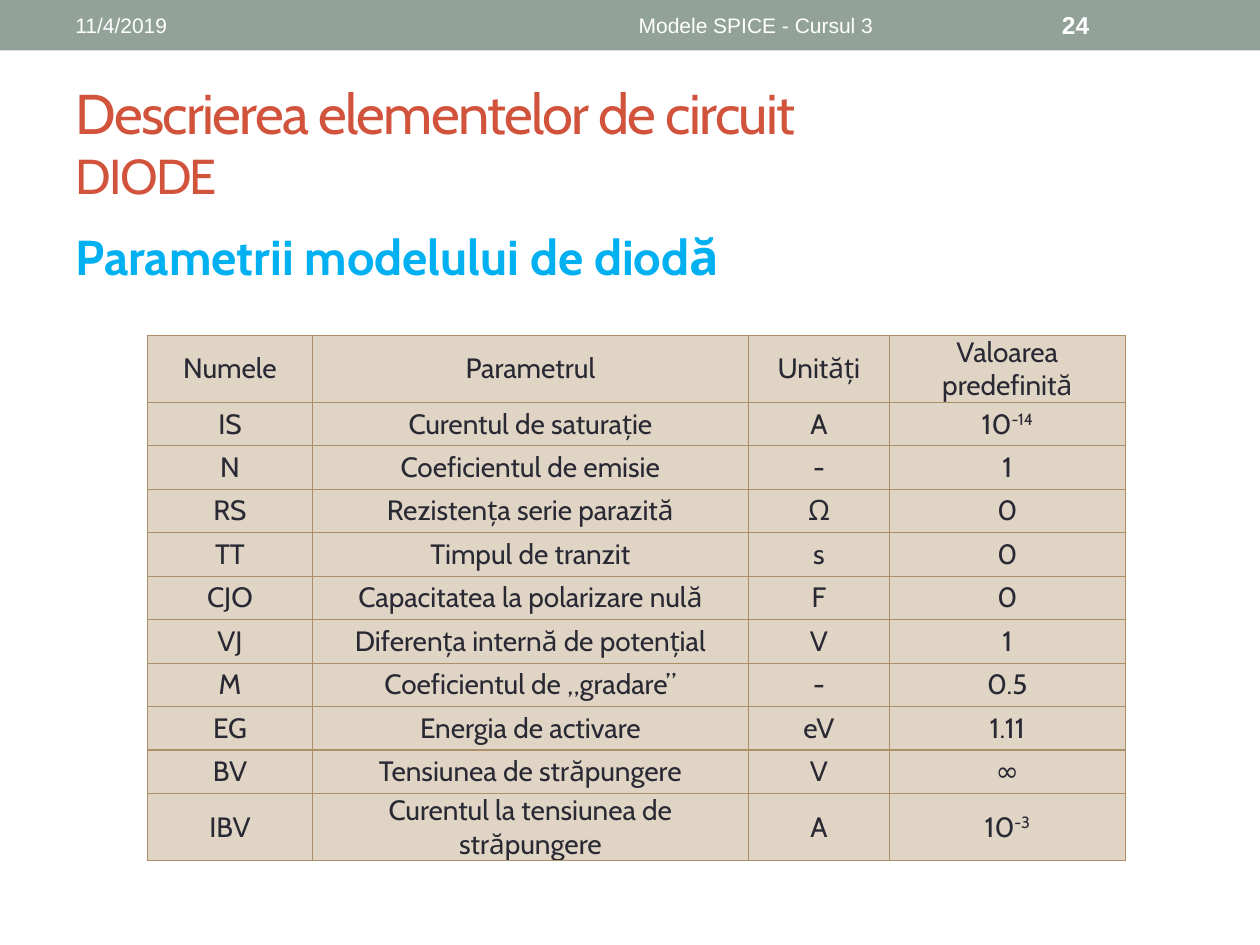
from lxml.etree import SubElement
from pptx import Presentation
from pptx.dml.color import RGBColor
from pptx.enum.shapes import MSO_SHAPE
from pptx.enum.text import MSO_ANCHOR, MSO_AUTO_SIZE, PP_ALIGN
from pptx.oxml.ns import qn
from pptx.util import Inches, Pt

COLORS = {
    "band": "93A299", "title": "D2533C", "subtitle": "00B0F0", "white": "FFFFFF",
    "cell": "E0D4C5", "border": "AD8F67", "text": "292934",
}

TITLE_LINES = [("Descrierea elementelor de circuit", 32), ("DIODE", 28)]
SUBTITLE = "Parametrii modelului de diodă"

# text, left, width, size, bold, alignment
HEADER_ITEMS = [
    ("11/4/2019", 0.5, 3.17, 12, False, PP_ALIGN.LEFT),
    ("Modele SPICE - Cursul 3", 3.75, 4.5, 12, False, PP_ALIGN.CENTER),
    ("24", 8.33, 1.17, 14, True, PP_ALIGN.LEFT),
]

# A caret marks the start of a superscript
PARAMETERS = [
    ("Numele", "Parametrul", "Unități", "Valoarea predefinită"),
    ("IS", "Curentul de saturație", "A", "10^-14"),
    ("N", "Coeficientul de emisie", "-", "1"),
    ("RS", "Rezistența serie parazită", "Ω", "0"),
    ("TT", "Timpul de tranzit", "s", "0"),
    ("CJO", "Capacitatea la polarizare nulă", "F", "0"),
    ("VJ", "Diferența internă de potențial", "V", "1"),
    ("M", "Coeficientul de „gradare”", "-", "0.5"),
    ("EG", "Energia de activare", "eV", "1.11"),
    ("BV", "Tensiunea de străpungere", "V", "∞"),
    ("IBV", "Curentul la tensiunea de străpungere", "A", "10^-3"),
]
COLUMN_WIDTHS = [1.31, 3.46, 1.12, 1.87]
TALL_ROW, ROW = 0.53, 0.345


def color(name):
    return RGBColor.from_string(COLORS[name])


def style_font(font, name, size, color_name, bold=False):
    font.name, font.size, font.bold = name, Pt(size), bold
    font.color.rgb = color(color_name)


def place(shape, left, top, width, height):
    shape.left, shape.top = Inches(left), Inches(top)
    shape.width, shape.height = Inches(width), Inches(height)


def add_header(slide):
    band = slide.shapes.add_shape(MSO_SHAPE.RECTANGLE, 0, 0, Inches(10), Inches(0.4))
    band.shadow.inherit = False
    band.fill.solid()
    band.fill.fore_color.rgb = color("band")
    band.line.fill.background()
    for text, left, width, size, bold, alignment in HEADER_ITEMS:
        item = slide.shapes.add_textbox(
            Inches(left), Inches(0.02), Inches(width), Inches(0.36))
        frame = item.text_frame
        frame.word_wrap = True
        frame.vertical_anchor = MSO_ANCHOR.MIDDLE
        paragraph = frame.paragraphs[0]
        paragraph.text, paragraph.alignment = text, alignment
        style_font(paragraph.font, "Arial", size, "white", bold)


def fill_title(title):
    place(title, 0.5, 0.58, 9, 1.08)
    frame = title.text_frame
    frame.auto_size = MSO_AUTO_SIZE.NONE
    frame.vertical_anchor = MSO_ANCHOR.MIDDLE
    paragraph = frame.paragraphs[0]
    paragraph.alignment = PP_ALIGN.LEFT
    for index, (text, size) in enumerate(TITLE_LINES):
        if index:
            paragraph.add_line_break()
        run = paragraph.add_run()
        run.text = text
        style_font(run.font, "Cabin", size, "title")
        run._r.get_or_add_rPr().set("spc", "-100")


def fill_subtitle(body):
    place(body, 0.5, 1.75, 9, 0.67)
    frame = body.text_frame
    frame.auto_size = MSO_AUTO_SIZE.NONE
    paragraph = frame.paragraphs[0]
    paragraph.text = SUBTITLE
    style_font(paragraph.font, "Cabin", 28, "subtitle", True)
    properties = paragraph._p.get_or_add_pPr()
    properties.set("marL", str(Inches(0.2)))
    properties.set("indent", str(Inches(-0.2)))
    properties.insert_element_before(
        properties.makeelement(qn("a:buNone")), "a:tabLst", "a:defRPr", "a:extLst")


def add_borders(cell):
    """Draw all four edges; they must come before the fill in the cell's XML."""
    properties = cell._tc.get_or_add_tcPr()
    for edge in ("a:lnL", "a:lnR", "a:lnT", "a:lnB"):
        line = SubElement(properties, qn(edge), w=str(Pt(0.75)))
        fill = SubElement(line, qn("a:solidFill"))
        SubElement(fill, qn("a:srgbClr"), val=COLORS["border"])


def fill_cell(cell, text):
    add_borders(cell)
    cell.fill.solid()
    cell.fill.fore_color.rgb = color("cell")
    cell.vertical_anchor = MSO_ANCHOR.MIDDLE
    cell.margin_left = cell.margin_right = Inches(0.08)
    cell.margin_top = cell.margin_bottom = 0
    paragraph = cell.text_frame.paragraphs[0]
    paragraph.alignment = PP_ALIGN.CENTER
    style_font(paragraph.font, "Cabin", 16, "text")
    base, _, exponent = text.partition("^")
    paragraph.add_run().text = base
    if exponent:
        superscript = paragraph.add_run()
        superscript.text = exponent
        superscript._r.get_or_add_rPr().set("baseline", "30000")


def add_parameter_table(slide):
    last = len(PARAMETERS) - 1
    heights = [TALL_ROW if i in (0, last) else ROW for i in range(last + 1)]
    table = slide.shapes.add_table(
        len(PARAMETERS), len(COLUMN_WIDTHS), Inches(1.17), Inches(2.66),
        Inches(sum(COLUMN_WIDTHS)), Inches(sum(heights))).table
    table.first_row = table.horz_banding = False
    for column, width in zip(table.columns, COLUMN_WIDTHS):
        column.width = Inches(width)
    for row, height, values in zip(table.rows, heights, PARAMETERS):
        row.height = Inches(height)
        for cell, value in zip(row.cells, values):
            fill_cell(cell, value)


def main():
    presentation = Presentation()
    presentation.slide_width, presentation.slide_height = Inches(10), Inches(7.5)
    slide = presentation.slides.add_slide(presentation.slide_layouts[1])
    add_header(slide)
    fill_title(slide.shapes.title)
    fill_subtitle(slide.placeholders[1])
    add_parameter_table(slide)
    presentation.save("out.pptx")


if __name__ == "__main__":
    main()
